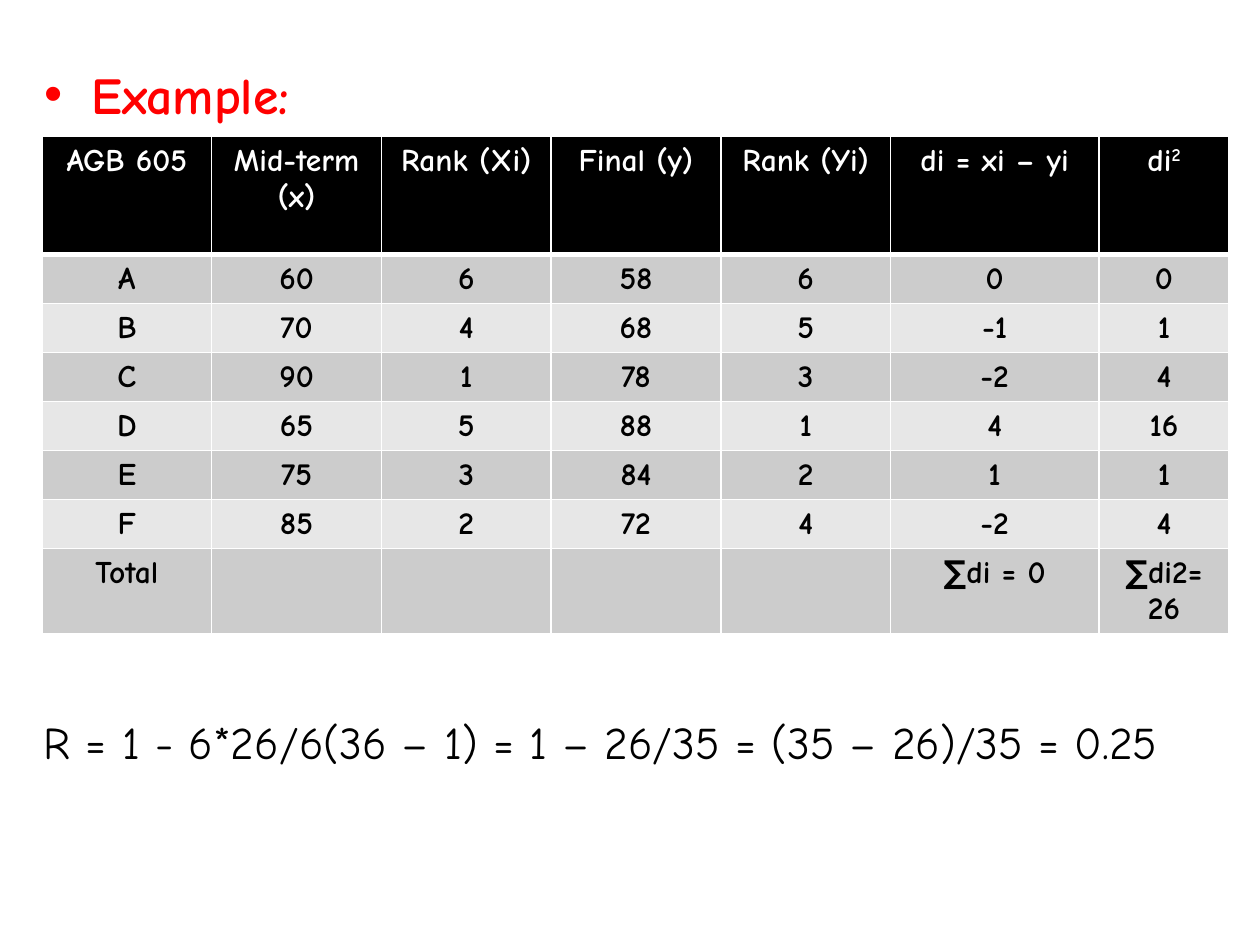
from pptx import Presentation
from pptx.dml.color import RGBColor
from pptx.enum.text import MSO_ANCHOR, MSO_AUTO_SIZE, PP_ALIGN
from pptx.oxml import parse_xml
from pptx.oxml.ns import nsdecls
from pptx.util import Pt

FONT = "Comic Neue"
COLORS = {"heading": "FF0000", "text": "000000", "header": "000000",
          "header_text": "FFFFFF", "odd": "CCCCCC", "even": "E7E7E7",
          "border": "FFFFFF"}
HEADING = "Example:"
FORMULA = "R = 1 - 6*26/6(36 – 1) = 1 – 26/35 = (35 – 26)/35 = 0.25"
RANKS = [
    ("AGB 605", "Mid-term (x)", "Rank (Xi)", "Final (y)", "Rank (Yi)", "di = xi – yi", "di"),
    ("A", "60", "6", "58", "6", "0", "0"),
    ("B", "70", "4", "68", "5", "-1", "1"),
    ("C", "90", "1", "78", "3", "-2", "4"),
    ("D", "65", "5", "88", "1", "4", "16"),
    ("E", "75", "3", "84", "2", "1", "1"),
    ("F", "85", "2", "72", "4", "-2", "4"),
    ("Total", "", "", "", "", "∑di = 0", "∑di2= 26"),
]
COLUMN_WIDTHS = [97] * 5 + [119, 74.5]
ROW_HEIGHTS = [67.5] + [28] * 6 + [48]


def set_font(paragraph, size, color, bold):
    font = paragraph.font
    font.name, font.size, font.bold = FONT, Pt(size), bold
    font.color.rgb = RGBColor.from_string(COLORS[color])


def place_line(shape, box, text):
    shape.left, shape.top, shape.width, shape.height = map(Pt, box)
    frame = shape.text_frame
    frame.text = text
    frame.word_wrap = True
    frame.auto_size = MSO_AUTO_SIZE.NONE
    frame.vertical_anchor = MSO_ANCHOR.MIDDLE
    paragraph = frame.paragraphs[0]
    paragraph.alignment = PP_ALIGN.LEFT
    return paragraph


def add_bullet(paragraph, indent):
    properties = paragraph._p.get_or_add_pPr()
    properties.set("marL", str(Pt(indent)))
    properties.set("indent", str(-Pt(indent)))
    for bullet in ('buFont {} typeface="Arial"', 'buChar {} char="•"'):
        properties.append(parse_xml(f"<a:{bullet.format(nsdecls('a'))}/>"))


def add_borders(cell, row):
    widths = {"L": 1, "R": 1, "T": 3 if row == 1 else 1, "B": 3 if row == 0 else 1}
    for side, width in widths.items():
        cell._tc.get_or_add_tcPr().append(parse_xml(
            f'<a:ln{side} {nsdecls("a")} w="{Pt(width)}"><a:solidFill>'
            f'<a:srgbClr val="{COLORS["border"]}"/></a:solidFill></a:ln{side}>'))


def add_rank_table(slide):
    table = slide.shapes.add_table(
        len(RANKS), len(COLUMN_WIDTHS), Pt(24), Pt(78),
        Pt(sum(COLUMN_WIDTHS)), Pt(sum(ROW_HEIGHTS))).table
    for column, width in zip(table.columns, COLUMN_WIDTHS):
        column.width = Pt(width)
    for row, height in zip(table.rows, ROW_HEIGHTS):
        row.height = Pt(height)
    for r, values in enumerate(RANKS):
        fill = "header" if r == 0 else "odd" if r % 2 else "even"
        for c, value in enumerate(values):
            cell = table.cell(r, c)
            add_borders(cell, r)
            cell.fill.solid()
            cell.fill.fore_color.rgb = RGBColor.from_string(COLORS[fill])
            cell.text = value
            paragraph = cell.text_frame.paragraphs[0]
            paragraph.alignment = PP_ALIGN.CENTER
            set_font(paragraph, 18, "text" if r else "header_text", True)
    square = table.cell(0, len(COLUMN_WIDTHS) - 1).text_frame.paragraphs[0].add_run()
    square.text = "2"
    square._r.get_or_add_rPr().set("baseline", "30000")


def main():
    """Build the rank correlation example slide."""
    deck = Presentation()
    deck.slide_width, deck.slide_height = Pt(720), Pt(540)
    slide = deck.slides.add_slide(deck.slide_layouts[5])

    heading = place_line(slide.shapes.title, (18, 33.5, 690, 40), HEADING)
    add_bullet(heading, 27)
    set_font(heading, 29.6, "heading", True)

    add_rank_table(slide)

    formula_box = slide.shapes.add_textbox(0, 0, 0, 0)
    formula = place_line(formula_box, (18, 403.5, 690, 40), FORMULA)
    set_font(formula, 25.9, "text", False)

    deck.save("out.pptx")


if __name__ == "__main__":
    main()
